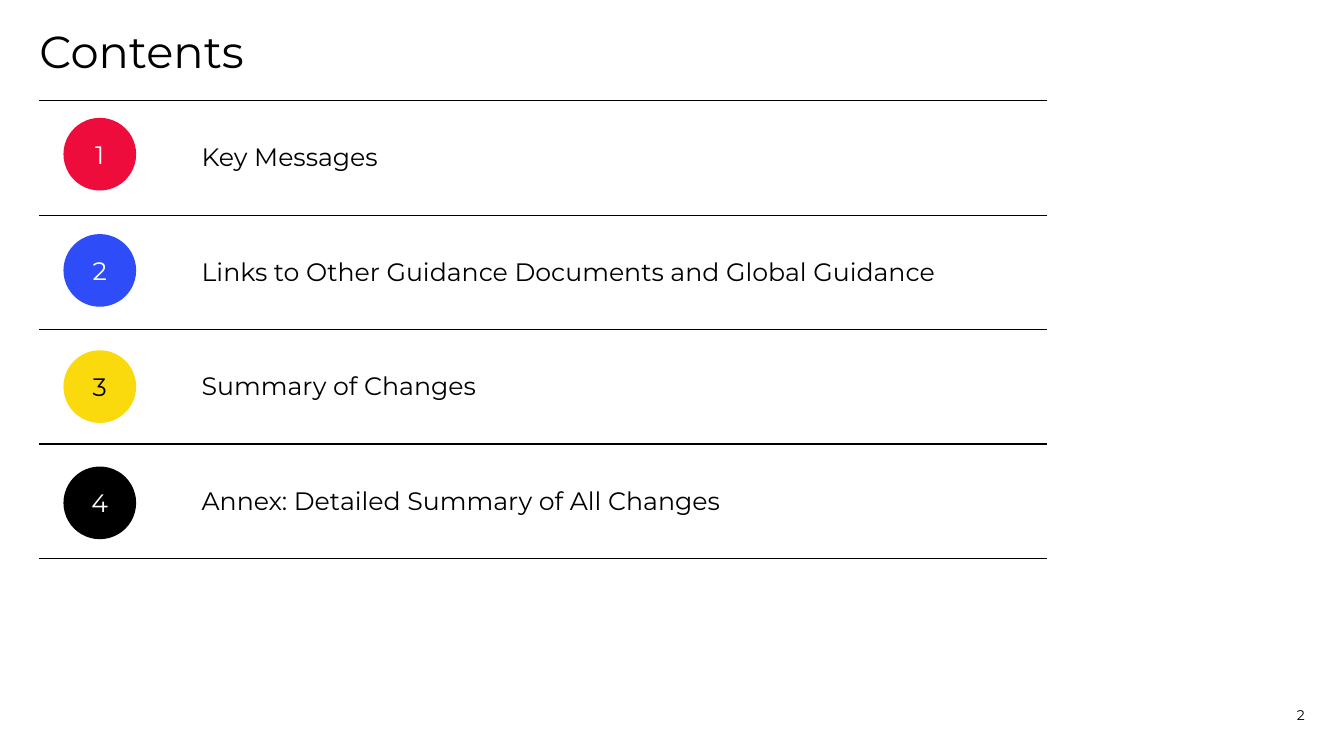
from lxml.etree import SubElement
from pptx import Presentation
from pptx.dml.color import RGBColor
from pptx.enum.shapes import MSO_SHAPE
from pptx.enum.text import MSO_ANCHOR, PP_ALIGN
from pptx.oxml.ns import qn
from pptx.util import Inches, Pt

BLACK = RGBColor(0x00, 0x00, 0x00)
WHITE = RGBColor(0xFF, 0xFF, 0xFF)
RED = RGBColor(0xEE, 0x0C, 0x3D)
BLUE = RGBColor(0x2E, 0x4D, 0xF9)
YELLOW = RGBColor(0xFA, 0xD9, 0x0D)

FONT = "Montserrat"
SECTIONS = [
    ("Key Messages", RED, WHITE),
    ("Links to Other Guidance Documents and Global Guidance", BLUE, WHITE),
    ("Summary of Changes", YELLOW, BLACK),
    ("Annex: Detailed Summary of All Changes", BLACK, WHITE),
]
COLUMN_WIDTHS = (1.51, 8.48)
BADGE_TOP, BADGE_STEP, BADGE_SIZE = 1.18, 1.153, 0.7


def set_text(frame, text, size, color=BLACK, align=PP_ALIGN.LEFT):
    """Write one formatted paragraph into a text frame and return it."""
    paragraph = frame.paragraphs[0]
    run = paragraph.add_run()
    run.text = text
    paragraph.alignment = align
    run.font.color.rgb = color
    for name, value in {"name": FONT, "size": Pt(size)}.items():
        setattr(run.font, name, value)
    return paragraph


def format_frame(frame, anchor):
    """Remove the margins of a text frame and set its anchor."""
    settings = {
        "margin_left": 0, "margin_right": 0, "margin_top": 0,
        "margin_bottom": 0, "word_wrap": True, "vertical_anchor": anchor,
    }
    for name, value in settings.items():
        setattr(frame, name, value)


def add_title(slide, text):
    """Place and format the title placeholder."""
    title = slide.shapes.title
    box = {"left": 0.39, "top": 0.3, "width": 12.55, "height": 0.51}
    for name, value in box.items():
        setattr(title, name, Inches(value))
    format_frame(title.text_frame, MSO_ANCHOR.TOP)
    set_text(title.text_frame, text, 32).line_spacing = 0.9


def add_page_number(slide, text):
    """Add the page number at the lower right."""
    box = slide.shapes.add_textbox(
        Inches(11.96), Inches(6.78), Inches(0.98), Inches(0.4))
    format_frame(box.text_frame, MSO_ANCHOR.BOTTOM)
    set_text(box.text_frame, text, 10, align=PP_ALIGN.RIGHT)


def set_borders(cell):
    """Rule a cell above and below, leaving its sides open."""
    properties = cell._tc.get_or_add_tcPr()
    for side in ("lnL", "lnR"):
        line = SubElement(properties, qn(f"a:{side}"))
        SubElement(line, qn("a:noFill"))
    for side in ("lnT", "lnB"):
        line = SubElement(properties, qn(f"a:{side}"), w=str(Pt(1)))
        fill = SubElement(line, qn("a:solidFill"))
        SubElement(fill, qn("a:srgbClr"), val=str(BLACK))


def add_contents_table(slide):
    """Add the ruled table of section names."""
    table = slide.shapes.add_table(
        len(SECTIONS), len(COLUMN_WIDTHS), Inches(0.39), Inches(1),
        Inches(sum(COLUMN_WIDTHS)), Inches(4.54)).table
    table.first_row = table.horz_banding = False
    for column, width in zip(table.columns, COLUMN_WIDTHS):
        column.width = Inches(width)
    for cell in table.iter_cells():
        set_borders(cell)
        cell.fill.background()
        cell.vertical_anchor = MSO_ANCHOR.MIDDLE
    for row, (name, _, _) in enumerate(SECTIONS):
        set_text(table.cell(row, 1).text_frame, name, 18)


def add_badge(slide, index, fill_color, text_color):
    """Add the numbered circle of a section."""
    badge = slide.shapes.add_shape(
        MSO_SHAPE.OVAL, Inches(0.64), Inches(BADGE_TOP + index * BADGE_STEP),
        Inches(BADGE_SIZE), Inches(BADGE_SIZE))
    badge.shadow.inherit = False
    for fill in (badge.fill, badge.line.fill):
        fill.solid()
        fill.fore_color.rgb = fill_color
    badge.line.width = Pt(1.5)
    badge.text_frame.vertical_anchor = MSO_ANCHOR.MIDDLE
    set_text(badge.text_frame, str(index + 1), 18, text_color, PP_ALIGN.CENTER)


def main():
    """Build and save the contents slide."""
    presentation = Presentation()
    presentation.slide_width = Inches(13.33)
    presentation.slide_height = Inches(7.5)
    slide = presentation.slides.add_slide(presentation.slide_layouts[5])
    add_page_number(slide, "2")
    add_title(slide, "Contents")
    add_contents_table(slide)
    for index, (_, fill_color, text_color) in enumerate(SECTIONS):
        add_badge(slide, index, fill_color, text_color)
    presentation.save("out.pptx")


if __name__ == "__main__":
    main()
